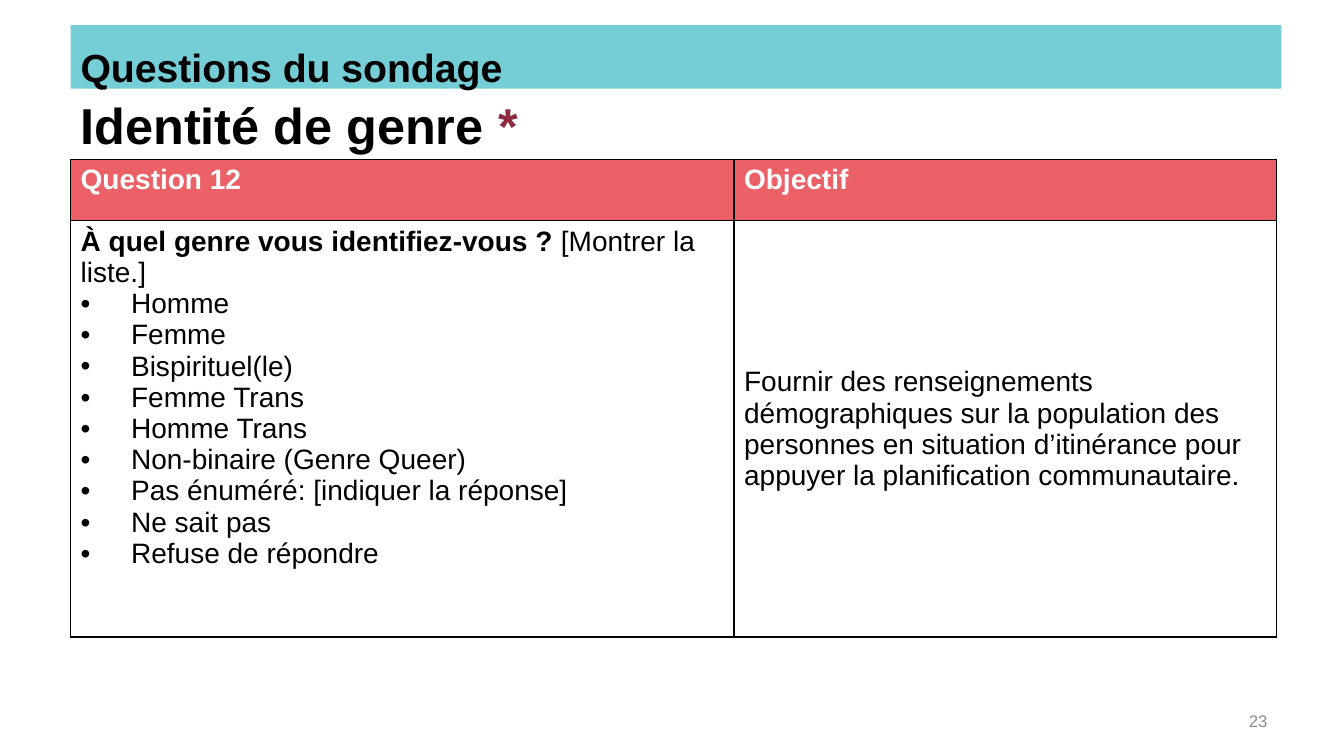
from pptx import Presentation
from pptx.dml.color import RGBColor
from pptx.enum.shapes import MSO_SHAPE
from pptx.enum.text import MSO_ANCHOR, PP_ALIGN
from pptx.oxml import parse_xml
from pptx.oxml.ns import nsdecls
from pptx.util import Inches, Pt

BLACK, WHITE, CORAL = "000000", "FFFFFF", "EC6168"
TEAL, WINE, GREY = "75CED6", "8E2B3F", "8C8C8C"
GENRES = [
    "Homme",
    "Femme",
    "Bispirituel(le)",
    "Femme Trans",
    "Homme Trans",
    "Non-binaire (Genre Queer)",
    "Pas énuméré: [indiquer la réponse]",
    "Ne sait pas",
    "Refuse de répondre",
]
GOAL = ("Fournir des renseignements démographiques sur la population des "
        "personnes en situation d’itinérance pour appuyer la planification "
        "communautaire.")


def paint(target, color):
    target.solid()
    target.fore_color.rgb = RGBColor.from_string(color)


def write(para, text, size, color=BLACK, bold=False):
    run = para.add_run()
    run.text = text
    font = run.font
    font.name, font.size, font.bold = "Arial", Pt(size), bold
    paint(font.fill, color)


def place(shape, box):
    shape.left, shape.top, shape.width, shape.height = map(Inches, box)


def add_title(slide, box):
    title = slide.shapes.title
    place(title, box)
    frame = title.text_frame
    frame.vertical_anchor = MSO_ANCHOR.BOTTOM
    para = frame.paragraphs[0]
    para.alignment = PP_ALIGN.LEFT
    write(para, "Identité de genre ", 36, BLACK, True)
    write(para, "*", 36, WINE, True)


def add_band(slide, box):
    band = slide.shapes.add_shape(MSO_SHAPE.RECTANGLE, *map(Inches, box))
    band.shadow.inherit = False
    paint(band.fill, TEAL)
    band.line.fill.background()
    frame = band.text_frame
    frame.word_wrap = True
    frame.vertical_anchor = MSO_ANCHOR.TOP
    para = frame.paragraphs[0]
    para.alignment = PP_ALIGN.LEFT
    para.line_spacing = Pt(43.2)
    write(para, "Questions du sondage", 28, BLACK, True)


def frame_cell(cell, color):
    props = cell._tc.get_or_add_tcPr()
    for side in ("lnL", "lnR", "lnT", "lnB"):
        props.append(parse_xml(
            f'<a:{side} {nsdecls("a")} w="12700"><a:solidFill>'
            f'<a:srgbClr val="{BLACK}"/></a:solidFill></a:{side}>'))
    paint(cell.fill, color)


def add_item(frame, text):
    para = frame.add_paragraph()
    props = para._p.get_or_add_pPr()
    props.set("marL", str(Inches(0.5)))
    props.set("indent", str(-Inches(0.5)))
    props.append(parse_xml(f'<a:buFont {nsdecls("a")} typeface="Arial"/>'))
    props.append(parse_xml(f'<a:buChar {nsdecls("a")} char="•"/>'))
    write(para, text, 20)


def add_grid(slide, box):
    table = slide.shapes.add_table(2, 2, *map(Inches, box)).table
    left, head = 6.58, 0.61
    for col, width in zip(table.columns, (left, box[2] - left)):
        col.width = Inches(width)
    for row, height in zip(table.rows, (head, box[3] - head)):
        row.height = Inches(height)
    for col, label in enumerate(("Question 12", "Objectif")):
        cell = table.cell(0, col)
        frame_cell(cell, CORAL)
        frame_cell(table.cell(1, col), WHITE)
        write(cell.text_frame.paragraphs[0], label, 20, WHITE, True)

    frame = table.cell(1, 0).text_frame
    para = frame.paragraphs[0]
    write(para, "À quel genre vous identifiez-vous ? ", 20, BLACK, True)
    write(para, "[Montrer la liste.]", 20)
    for genre in GENRES:
        add_item(frame, genre)

    goal = table.cell(1, 1)
    goal.vertical_anchor = MSO_ANCHOR.MIDDLE
    write(goal.text_frame.paragraphs[0], GOAL, 20)


def add_number(slide, box):
    frame = slide.shapes.add_textbox(*map(Inches, box)).text_frame
    frame.word_wrap = True
    frame.vertical_anchor = MSO_ANCHOR.MIDDLE
    para = frame.paragraphs[0]
    para.alignment = PP_ALIGN.RIGHT
    write(para, "23", 12, GREY)


def main():
    deck = Presentation()
    deck.slide_width, deck.slide_height = Inches(13.33), Inches(7.5)
    slide = deck.slides.add_slide(deck.slide_layouts[5])
    paint(slide.background.fill, WHITE)
    add_title(slide, (0.7, 0.81, 8.88, 0.77))
    add_band(slide, (0.7, 0.25, 12.01, 0.63))
    add_grid(slide, (0.7, 1.58, 11.96, 4.74))
    add_number(slide, (9.56, 6.95, 3.11, 0.4))
    deck.save("out.pptx")


if __name__ == "__main__":
    main()
